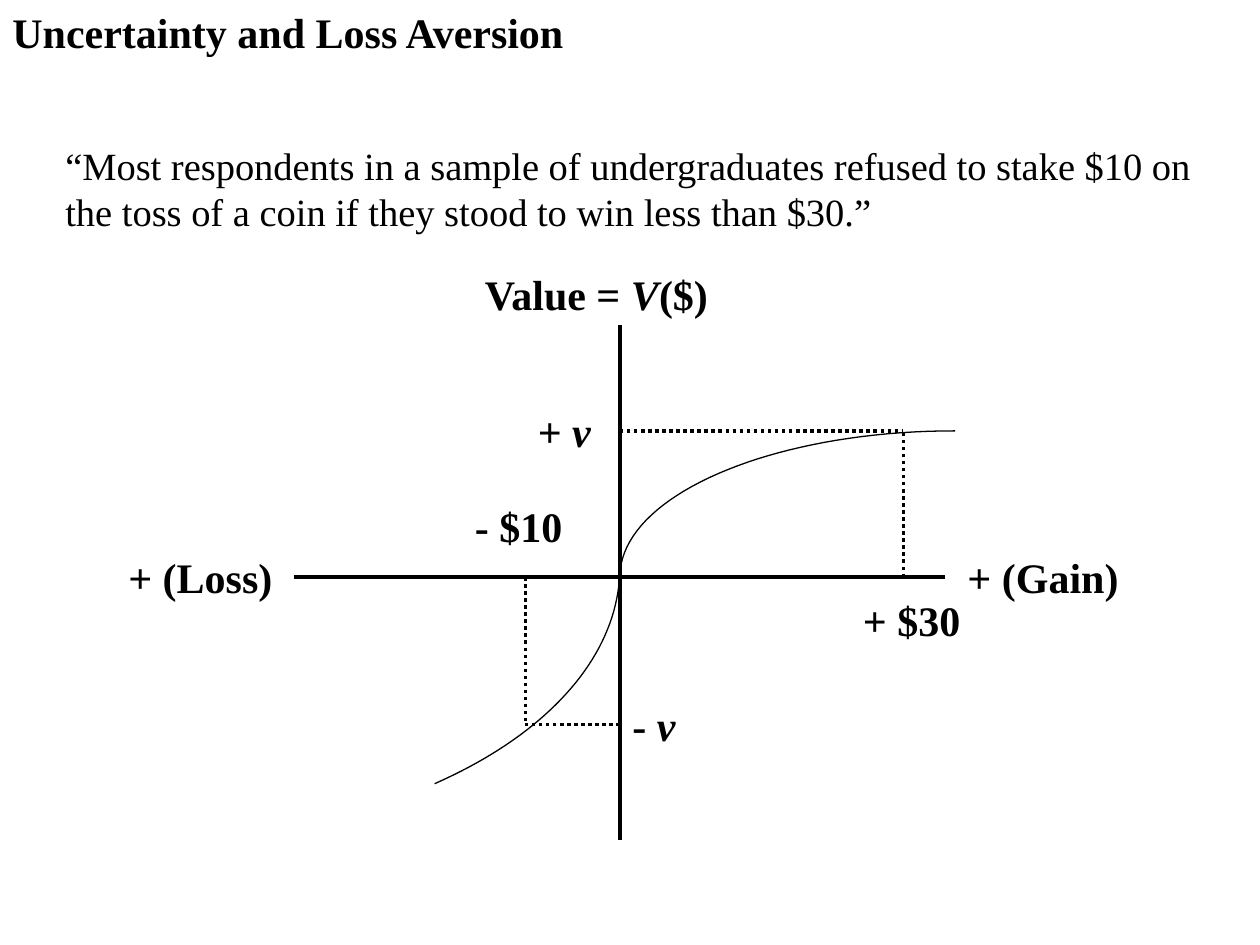
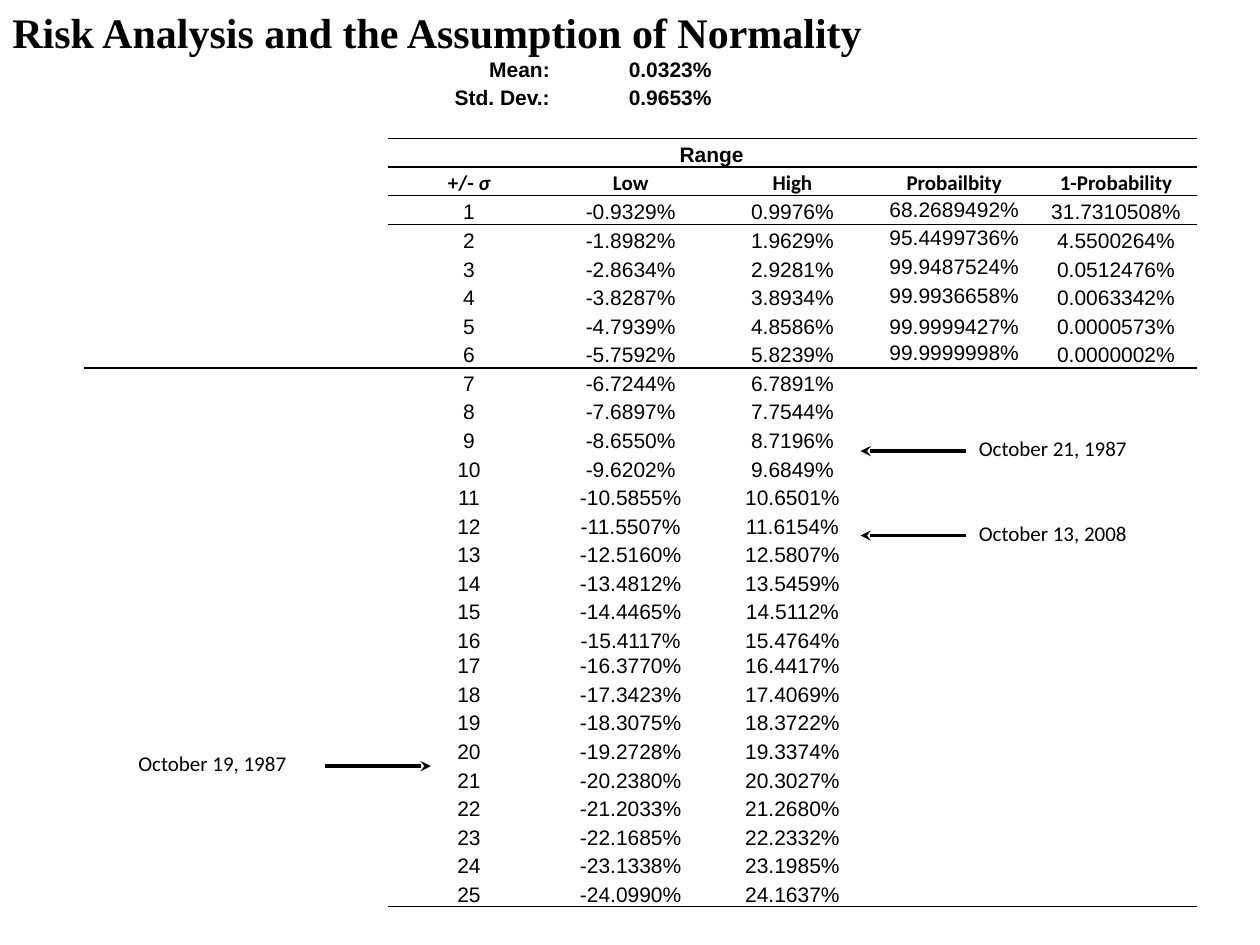
from lxml.etree import SubElement
from pptx import Presentation
from pptx.dml.color import RGBColor
from pptx.enum.dml import MSO_LINE
from pptx.enum.shapes import MSO_CONNECTOR
from pptx.enum.text import MSO_ANCHOR, MSO_AUTO_SIZE, PP_ALIGN
from pptx.oxml.ns import qn
from pptx.util import Inches, Pt

BLACK = "000000"
SERIF, SANS, LABEL = "Times New Roman", "Arial", "Calibri"
PLAIN_TABLE = "{2D5ABB26-0587-4C30-8999-92F81FD0307C}"
RANGES = [
    ("-0.9329%", "0.9976%"), ("-1.8982%", "1.9629%"), ("-2.8634%", "2.9281%"),
    ("-3.8287%", "3.8934%"), ("-4.7939%", "4.8586%"), ("-5.7592%", "5.8239%"),
    ("-6.7244%", "6.7891%"), ("-7.6897%", "7.7544%"), ("-8.6550%", "8.7196%"),
    ("-9.6202%", "9.6849%"), ("-10.5855%", "10.6501%"), ("-11.5507%", "11.6154%"),
    ("-12.5160%", "12.5807%"), ("-13.4812%", "13.5459%"), ("-14.4465%", "14.5112%"),
    ("-15.4117%", "15.4764%"), ("-16.3770%", "16.4417%"), ("-17.3423%", "17.4069%"),
    ("-18.3075%", "18.3722%"), ("-19.2728%", "19.3374%"), ("-20.2380%", "20.3027%"),
    ("-21.2033%", "21.2680%"), ("-22.1685%", "22.2332%"), ("-23.1338%", "23.1985%"),
    ("-24.0990%", "24.1637%"),
]
PROBABILITIES = [
    ("68.2689492%", "31.7310508%"), ("95.4499736%", "4.5500264%"),
    ("99.9487524%", "0.0512476%"), ("99.9936658%", "0.0063342%"),
    ("99.9999427%", "0.0000573%"), ("99.9999998%", "0.0000002%"),
]


def color(value):
    """Turn a hex string into a colour."""
    return RGBColor.from_string(value)


def write(frame, text, size=24, font=SERIF, bold=True, align=None):
    """Write one paragraph; parts between asterisks are italic."""
    paragraph = frame.paragraphs[0]
    paragraph.alignment = align
    for index, part in enumerate(text.split("*")):
        if part:
            run = paragraph.add_run()
            run.text = part
            run.font.size, run.font.name = Pt(size), font
            run.font.bold, run.font.italic = bold, index % 2 == 1
            run.font.color.rgb = color(BLACK)


def label(slide, text, left, top, width, height=0.5, wrap=False, **style):
    """Add a text box."""
    box = slide.shapes.add_textbox(*map(Inches, (left, top, width, height)))
    box.text_frame.word_wrap = wrap
    box.text_frame.auto_size = MSO_AUTO_SIZE.SHAPE_TO_FIT_TEXT
    write(box.text_frame, text, **style)


def line(slide, start, end, width=2, dash=None, arrow=False):
    """Draw a straight line, with an arrowhead at its end if asked."""
    rule = slide.shapes.add_connector(
        MSO_CONNECTOR.STRAIGHT, *map(Inches, (*start, *end)))
    rule.line.color.rgb = color(BLACK)
    rule.line.width = Pt(width)
    if dash:
        rule.line.dash_style = dash
    if arrow:
        SubElement(rule.line._get_or_add_ln(), qn("a:tailEnd"), type="stealth")
    SubElement(rule._element.spPr, qn("a:effectLst"))


def curve(slide, controls, steps=40):
    """Draw a cubic curve through closely spaced points."""
    points = []
    for step in range(steps + 1):
        t = step / steps
        weights = ((1 - t) ** 3, 3 * t * (1 - t) ** 2, 3 * t * t * (1 - t), t ** 3)
        points.append(tuple(
            Inches(sum(w * c[axis] for w, c in zip(weights, controls)))
            for axis in (0, 1)))
    builder = slide.shapes.build_freeform(*points[0], scale=1.0)
    builder.add_line_segments(points[1:], close=False)
    outline = builder.convert_to_shape()
    outline.shadow.inherit = False
    outline.fill.background()
    outline.line.color.rgb = color(BLACK)
    outline.line.width = Pt(0.75)


def new_slide(deck, title, title_width):
    """Add a blank slide with its title."""
    slide = deck.slides.add_slide(deck.slide_layouts[6])
    label(slide, title, 0, 0, title_width)
    return slide


def value_plot(slide, x, y):
    """Draw the value function around its origin."""
    def at(dx, dy):
        return x + dx, y + dy

    line(slide, at(0, -2), at(0, 2.09), 2.5)
    line(slide, at(-2.59, 0), at(2.58, 0), 2.5)
    for dx, dy in ((2.25, -1.16), (-0.75, 1.17)):
        line(slide, at(dx, 0), at(dx, dy), dash=MSO_LINE.ROUND_DOT)
        line(slide, at(0, dy), at(dx, dy), dash=MSO_LINE.ROUND_DOT)
    curve(slide, [at(2.66, -1.16), at(1.19, -1.16), at(0, -0.64), at(0, 0)])
    curve(slide, [at(-1.47, 1.64), at(-0.54, 1.23), at(0, 0.6), at(0, -0.08)])
    for text, dx, dy, width in (
            ("Value = *V*($)", -1.17, -2.5, 2.01),
            ("+ (Gain)", 2.66, -0.25, 1.42), ("+ (Loss)", -4, -0.25, 1.41),
            ("+ *v*", -0.75, -1.41, 0.74), ("- *v*", 0, 0.92, 0.63),
            ("+ $30", 1.83, 0.09, 1.06), ("- $10", -1.25, -0.66, 0.92)):
        label(slide, text, *at(dx, dy), width)


def fill_cell(cell, text, anchor=MSO_ANCHOR.BOTTOM, **style):
    """Fill a table cell without margins or background."""
    cell.margin_left = cell.margin_right = cell.margin_top = cell.margin_bottom = 0
    cell.vertical_anchor = anchor
    cell.fill.background()
    write(cell.text_frame, text, size=12, **style)
    if not text:
        end = SubElement(cell.text_frame.paragraphs[0]._p, qn("a:endParaRPr"), sz="1200")
        SubElement(end, qn("a:latin"), typeface=SANS)


def border(cell, side, width):
    """Draw one border of a cell, ahead of its fill."""
    properties = cell._tc.get_or_add_tcPr()
    edge = SubElement(properties, qn(side), w=str(Pt(width)))
    SubElement(SubElement(edge, qn("a:solidFill")), qn("a:srgbClr"), val=BLACK)
    properties.insert(0, edge)


def sigma_table(slide, left, top, width, height):
    """Add the table of ranges and probabilities by standard deviation."""
    rows = [("Mean:", "0.0323%"), ("Std. Dev.:", "0.9653%"), (), ("", "Range"),
            ("+/- *σ*", "Low", "High", "Probailbity", "1-Probability")]
    for index, limits in enumerate(RANGES):
        chances = PROBABILITIES[index] if index < len(PROBABILITIES) else ()
        rows.append((str(index + 1), *limits, *chances))
    table_frame = slide.shapes.add_table(
        len(rows), 5, *map(Inches, (left, top, width, height)))
    table = table_frame.table
    table.first_row = table.horz_banding = False
    table._tbl.tblPr.find(qn("a:tableStyleId")).text = PLAIN_TABLE
    for column in table.columns:
        column.width = Inches(width / 5)
    for row in table.rows:
        row.height = Inches(height / len(rows))
    table.rows[21].height = Inches(0.05)
    table.cell(3, 1).merge(table.cell(3, 2))
    for r, values in enumerate(rows):
        for c in range(5):
            middle = c == 3 and r in (5, 6, 7, 8, 10)
            fill_cell(table.cell(r, c), values[c] if c < len(values) else "",
                      anchor=MSO_ANCHOR.MIDDLE if middle else MSO_ANCHOR.BOTTOM,
                      font=LABEL if r == 4 else SANS, bold=r < 5,
                      align=PP_ALIGN.RIGHT if r < 2 else PP_ALIGN.CENTER)
    for r, weight in ((2, 1), (4, 0.5), (29, 0.5)):
        for c in range(5):
            border(table.cell(r, c), "a:lnB", weight)
            if r + 1 < len(rows):
                border(table.cell(r + 1, c), "a:lnT", weight)


def dated_arrow(slide, date, date_left, tail, tip, y):
    """Point from a date to a row of the table."""
    label(slide, date, date_left, y - 0.17, 1.5, 0.3, size=12, font=LABEL, bold=False)
    line(slide, (tail, y), (tip, y), arrow=True)


def loss_aversion(deck):
    """Build the slide on loss aversion."""
    slide = new_slide(deck, "Uncertainty and Loss Aversion", 4.62)
    label(slide, "“Most respondents in a sample of undergraduates refused to stake "
          "$10 on the toss of a coin if they stood to win less than $30.”",
          0.42, 1.08, 9.25, 0.83, wrap=True, size=22, bold=False)
    value_plot(slide, 4.92, 4.58)


def normality(deck):
    """Build the slide on the assumption of normality."""
    slide = new_slide(deck, "Risk Analysis and the Assumption of Normality", 7.01)
    sigma_table(slide, 3.08, 0.42, 6.42, 6.81)
    line(slide, (9.5, 2.92), (0.67, 2.92), 1)
    dated_arrow(slide, "October 19, 1987", 1, 2.58, 3.42, 6.08)
    dated_arrow(slide, "October 13, 2008", 7.67, 7.67, 6.83, 4.25)
    dated_arrow(slide, "October 21, 1987", 7.67, 7.67, 6.83, 3.58)


def main():
    """Build and save the deck."""
    deck = Presentation()
    deck.slide_width, deck.slide_height = Inches(10), Inches(7.5)
    loss_aversion(deck)
    normality(deck)
    deck.save("out.pptx")


if __name__ == "__main__":
    main()
